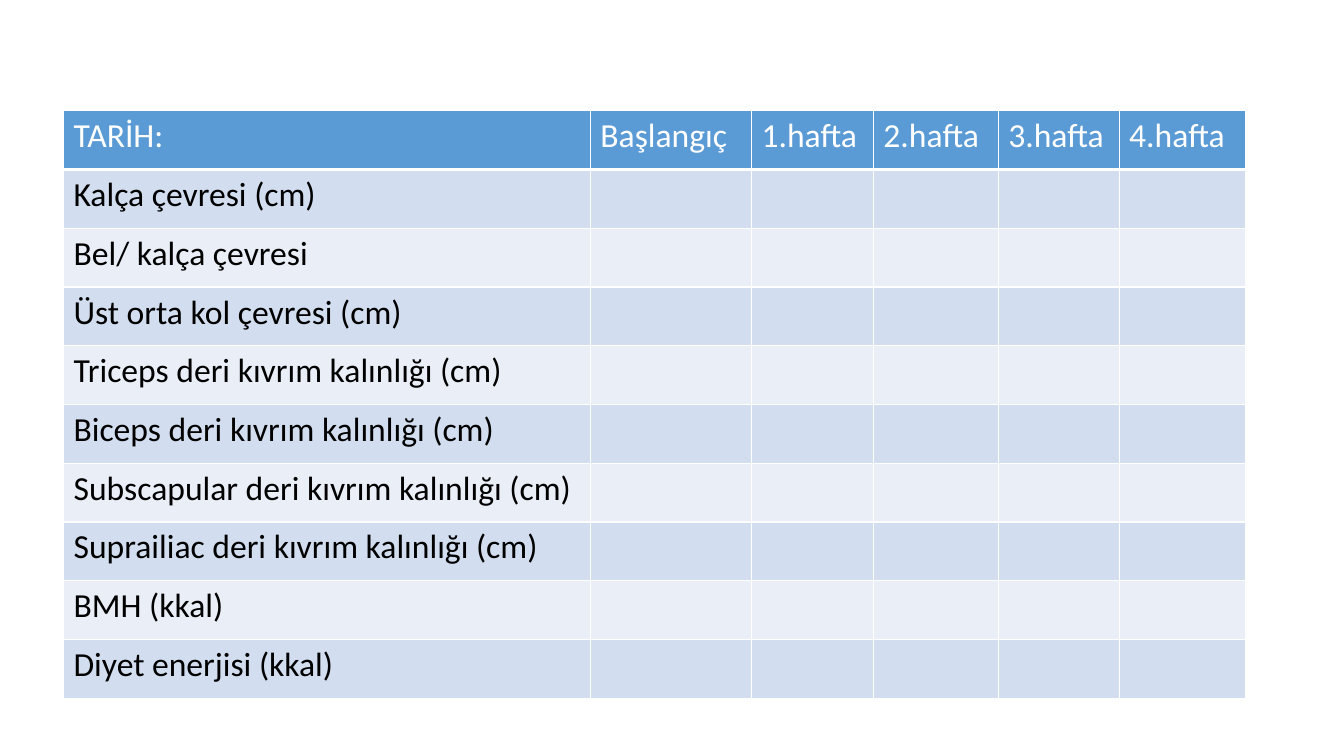
import pptx
import pptx.dml.color
import pptx.oxml
import pptx.oxml.ns
import pptx.util
from pptx.util import Inches

RGBColor = pptx.dml.color.RGBColor
WHITE = RGBColor(0xFF, 0xFF, 0xFF)
BLACK = RGBColor(0, 0, 0)
BLUE = RGBColor(0x5B, 0x9B, 0xD5)
BANDS = (RGBColor(0xEA, 0xEF, 0xF7), RGBColor(0xD2, 0xDE, 0xEF))

HEADS = ["TARİH:", "Başlangıç"] + [f"{week}.hafta" for week in range(1, 5)]
LABELS = [
    "Kalça çevresi (cm)",
    "Bel/ kalça çevresi",
    "Üst orta kol çevresi (cm)",
    "Triceps deri kıvrım kalınlığı (cm)",
    "Biceps deri kıvrım kalınlığı (cm)",
    "Subscapular deri kıvrım kalınlığı (cm)",
    "Suprailiac deri kıvrım kalınlığı (cm)",
    "BMH (kkal)",
    "Diyet enerjisi (kkal)",
]
WIDTHS = (5.23, 1.6, 1.21, 1.24, 1.2, 1.26)


def border(cell, base):
    """Draw white cell edges, with the given bottom width in points."""
    props = cell._tc.get_or_add_tcPr()
    for side, width in (("L", 1), ("R", 1), ("T", 1), ("B", base)):
        props.append(pptx.oxml.parse_xml(
            f'<a:ln{side} {pptx.oxml.ns.nsdecls("a")} w="{pptx.util.Pt(width)}">'
            f'<a:solidFill><a:srgbClr val="{WHITE}"/></a:solidFill></a:ln{side}>'))


def style(cell, text, fill, ink, base):
    """Fill one cell and format its text."""
    border(cell, base)
    cell.fill.solid()
    cell.fill.fore_color.rgb = fill
    cell.text_frame.text = text
    for run in cell.text_frame.paragraphs[0].runs:
        run.font.name = "Calibri"
        run.font.size = pptx.util.Pt(24)
        run.font.bold = False
        run.font.color.rgb = ink


def chart_weeks(slide, left, top, width, height):
    """Place the weekly measurement table in its box."""
    rows = [HEADS] + [[label] + [""] * (len(HEADS) - 1) for label in LABELS]
    table = slide.shapes.add_table(
        len(rows), len(HEADS), Inches(left), Inches(top),
        Inches(width), Inches(height)).table
    for column, share in zip(table.columns, WIDTHS):
        column.width = Inches(width * share / sum(WIDTHS))
    for r, row in enumerate(rows):
        table.rows[r].height = Inches(height / len(rows))
        look = (BANDS[r % 2], BLACK, 1) if r else (BLUE, WHITE, 3)
        for c, text in enumerate(row):
            style(table.cell(r, c), text, *look)


def main():
    """Build and save the slide."""
    deck = pptx.Presentation()
    deck.slide_width = Inches(13.33)
    deck.slide_height = Inches(7.5)
    slide = deck.slides.add_slide(deck.slide_layouts[6])
    chart_weeks(slide, 0.63, 1.1, 11.73, 5.83)
    deck.save("out.pptx")


if __name__ == "__main__":
    main()
